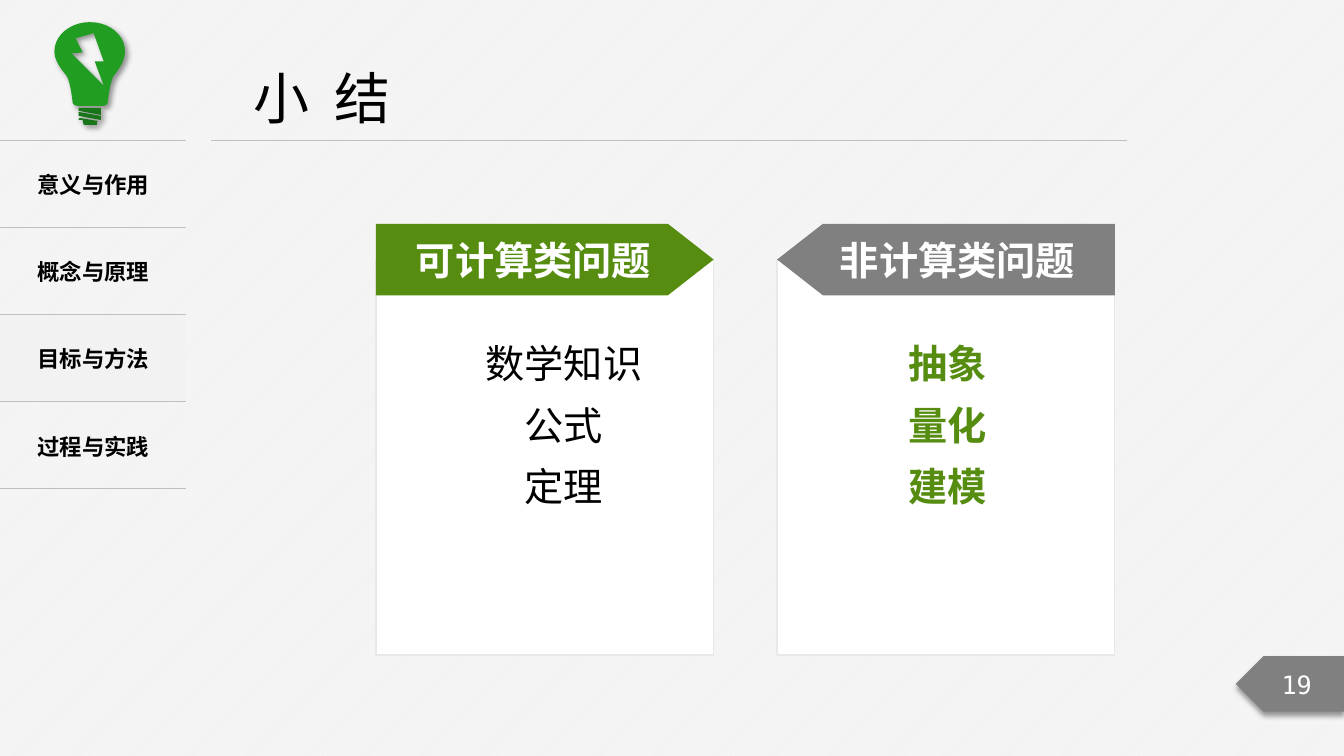
"""Build the summary slide on computable and non-computable problems."""
from dataclasses import dataclass

from lxml import etree
from pptx import Presentation
from pptx import util as u
from pptx.dml.color import RGBColor
from pptx.enum import dml, shapes, text
from pptx.oxml import ns
from pptx.shapes import autoshape
from pptx.text import text as words

WIDTH, HEIGHT = u.Inches(40 / 3), u.Inches(7.5)
COLUMN, ROW = WIDTH / 160, HEIGHT / 90
BULB_STEP = COLUMN * 0.12
CURVE_STEPS = 10

WHITE = RGBColor(0xFF, 0xFF, 0xFF)
BLACK = RGBColor(0x00, 0x00, 0x00)
PAPER = RGBColor(0xF2, 0xF2, 0xF2)
RULE = RGBColor(0xBF, 0xBF, 0xBF)
EDGE = RGBColor(0xE8, 0xE8, 0xE6)
GRAY = RGBColor(0x80, 0x80, 0x80)
GREEN = RGBColor(0x56, 0x8D, 0x11)
BULB_GREEN = RGBColor(0x21, 0x9E, 0x21)
BASE_GREEN = RGBColor(0x19, 0x75, 0x19)
CJK, MONO = "Noto Sans CJK SC", "DejaVu Sans Mono"
CENTER, LEFT = text.PP_ALIGN.CENTER, text.PP_ALIGN.LEFT
MIDDLE, TOP = text.MSO_ANCHOR.MIDDLE, text.MSO_ANCHOR.TOP
PENTAGON = shapes.MSO_SHAPE.PENTAGON
TIGHT = (0.08, 0.04)

Contour = list[tuple[int, ...]]


@dataclass(frozen=True)
class Box:
    """A place on the grid, in columns and rows."""
    left: float
    top: float
    width: float
    height: float

    def emu(self) -> tuple[int, int, int, int]:
        """Return the place in slide units."""
        return (round(self.left * COLUMN), round(self.top * ROW),
                round(self.width * COLUMN), round(self.height * ROW))


@dataclass(frozen=True)
class Panel:
    """A card with an arrow heading and a list of topics."""
    heading: str
    topics: tuple[str, ...]
    banner: RGBColor
    topic_color: RGBColor
    bold: bool
    align: text.PP_ALIGN
    topics_left: float
    topics_width: float
    flipped: bool


@dataclass(frozen=True)
class BulbPart:
    """A filled piece of the bulb; pairs are corners, sextets are curves."""
    color: RGBColor
    contours: tuple[Contour, ...]


CHAPTERS = ("意义与作用", "概念与原理", "目标与方法", "过程与实践")
CURRENT_CHAPTER = "目标与方法"
PANELS = (
    Panel("可计算类问题", ("数学知识", "公式", "定理"), GREEN, BLACK, False,
          CENTER, 55.68, 22.92, False),
    Panel("非计算类问题", ("抽象", "量化", "建模"), GRAY, GREEN, True,
          LEFT, 107.16, 18.36, True),
)
BULB = (
    BulbPart(BULB_GREEN, (
        [(89, 22), (70, 22, 54, 35, 54, 51), (54, 61, 62, 70, 66, 75),
         (70, 81, 72, 101, 72, 101), (72, 103, 74, 105, 77, 105), (102, 105),
         (105, 105, 107, 103, 107, 101), (107, 101, 109, 81, 113, 75),
         (117, 70, 124, 61, 124, 51), (124, 35, 109, 22, 89, 22)],
        [(71, 53), (82, 52), (75, 38), (93, 33), (103, 61), (94, 61), (103, 85)],
    )),
    BulbPart(BASE_GREEN, ([(78, 107), (100, 107), (100, 114), (78, 110)],)),
    BulbPart(BASE_GREEN, ([(100, 119), (100, 115), (78, 111), (78, 115)],)),
    BulbPart(BASE_GREEN, ([(79, 117), (97, 120), (96, 122), (96, 124),
                           (83, 124), (82, 119), (78, 119), (78, 118)],)),
)


def write(frame: words.TextFrame, lines: tuple[str, ...], *, size: float,
          color: RGBColor, font: str = CJK, bold: bool = False,
          align: text.PP_ALIGN = CENTER, anchor: text.MSO_ANCHOR = MIDDLE,
          spacing: float = 1.0, tracking: int = 0, wrap: bool = True,
          inset: tuple[float, float] = (0.1, 0.05)) -> None:
    """Fill a text frame with one paragraph for each line."""
    frame.word_wrap = wrap
    frame.vertical_anchor = anchor
    frame.margin_left = frame.margin_right = u.Inches(inset[0])
    frame.margin_top = frame.margin_bottom = u.Inches(inset[1])
    for index, line in enumerate(lines):
        paragraph = frame.add_paragraph() if index else frame.paragraphs[0]
        paragraph.alignment = align
        paragraph.line_spacing = spacing
        run = paragraph.add_run()
        run.text = line
        run.font.size, run.font.bold = u.Pt(size), bold
        run.font.color.rgb = color
        run.font.name = font
        properties = run.font._element if hasattr(run.font, "_element") else run._r.get_or_add_rPr()
        etree.SubElement(properties, ns.qn("a:ea"), typeface=font)
        if tracking:
            properties.set("spc", str(tracking))


def paint(shape: autoshape.Shape, fill: RGBColor, edge: RGBColor | None = None) -> None:
    """Give a shape a flat fill and an optional thin edge."""
    shape.fill.solid()
    shape.fill.fore_color.rgb = fill
    if edge is None:
        shape.line.fill.background()
    else:
        shape.line.color.rgb = edge
        shape.line.width = u.Pt(1)
    shape.shadow.inherit = False


def cast_shadow(shape: autoshape.Shape, angle: int) -> None:
    """Add a soft dark shadow in the given direction."""
    effects = shape.element.spPr.find(ns.qn("a:effectLst"))
    shadow = etree.SubElement(effects, ns.qn("a:outerShdw"), blurRad=str(u.Pt(4)),
                              dist=str(u.Pt(3)), dir=str(angle * 60000),
                              algn="ctr", rotWithShape="0")
    tone = etree.SubElement(shadow, ns.qn("a:srgbClr"), val=str(BLACK))
    etree.SubElement(tone, ns.qn("a:alpha"), val="40000")


def add_block(slide, kind: shapes.MSO_SHAPE, box: Box, fill: RGBColor,
              edge: RGBColor | None = None, flipped: bool = False) -> autoshape.Shape:
    """Add a painted preset shape, mirrored if asked."""
    block = slide.shapes.add_shape(kind, *box.emu())
    paint(block, fill, edge)
    if flipped:
        block.element.spPr.find(ns.qn("a:xfrm")).set("flipH", "1")
    return block


def trace(contour: Contour) -> list[tuple[int, int]]:
    """Turn corners and cubic curves into slide points."""
    points = [contour[0]]
    for step in contour[1:]:
        if len(step) == 2:
            points.append(step)
            continue
        (x0, y0), (x1, y1, x2, y2, x3, y3) = points[-1], step
        for index in range(1, CURVE_STEPS + 1):
            t = index / CURVE_STEPS
            a, b, c, d = (1 - t) ** 3, 3 * t * (1 - t) ** 2, 3 * t * t * (1 - t), t ** 3
            points.append((a * x0 + b * x1 + c * x2 + d * x3,
                           a * y0 + b * y1 + c * y2 + d * y3))
    return [(round(x * BULB_STEP), round(y * BULB_STEP)) for x, y in points]


def add_bulb(slide) -> None:
    """Draw the light bulb from its parts."""
    bulb = slide.shapes.add_group_shape()
    for part in BULB:
        first, *holes = [trace(contour) for contour in part.contours]
        outline = bulb.shapes.build_freeform(*first[0])
        outline.add_line_segments(first[1:], close=True)
        for hole in holes:
            outline.move_to(*hole[0])
            outline.add_line_segments(hole[1:], close=True)
        piece = outline.convert_to_shape()
        paint(piece, part.color)
        cast_shadow(piece, 45)


def add_chapters(slide) -> None:
    """Add the chapter list with ruled rows."""
    menu = slide.shapes.add_table(len(CHAPTERS), 1, *Box(0, 16.68, 22.2, 41.52).emu()).table
    menu.first_row = menu.horz_banding = False
    for index, chapter in enumerate(CHAPTERS):
        cell = menu.cell(index, 0)
        write(cell.text_frame, (chapter,), size=16, color=BLACK, bold=True)
        cell.vertical_anchor = MIDDLE
        if chapter == CURRENT_CHAPTER:
            cell.fill.solid()
            cell.fill.fore_color.rgb = PAPER
        else:
            cell.fill.background()
        properties = cell._tc.get_or_add_tcPr()
        for place, side in enumerate("LRTB"):
            border = etree.Element(ns.qn(f"a:ln{side}"), w=str(u.Pt(1)))
            ruled = side in "TB"
            ink = etree.SubElement(border, ns.qn("a:solidFill" if ruled else "a:noFill"))
            if ruled:
                etree.SubElement(ink, ns.qn("a:srgbClr"), val=str(RULE))
            properties.insert(place, border)


def add_panel(slide, panel: Panel, left: float) -> None:
    """Add a card, its arrow heading and its topics."""
    add_block(slide, shapes.MSO_SHAPE.RECTANGLE, Box(left, 30.96, 40.2, 47.04), WHITE, EDGE)
    banner = add_block(slide, PENTAGON, Box(left, 26.64, 40.2, 8.52), panel.banner,
                       flipped=panel.flipped)
    banner.adjustments[0] = 0.64
    write(banner.text_frame, (panel.heading,), size=28, color=WHITE, bold=True,
          wrap=False, inset=TIGHT)
    topics = slide.shapes.add_textbox(
        *Box(panel.topics_left, 38.28, panel.topics_width, 23.04).emu())
    write(topics.text_frame, panel.topics, size=28, color=panel.topic_color,
          bold=panel.bold, align=panel.align, anchor=TOP, spacing=1.3, inset=TIGHT)


def main() -> None:
    """Assemble and save the slide."""
    deck = Presentation()
    deck.slide_width, deck.slide_height = WIDTH, HEIGHT
    slide = deck.slides.add_slide(deck.slide_layouts[6])
    backdrop = slide.background.fill
    backdrop.patterned()
    backdrop.pattern = dml.MSO_PATTERN.LIGHT_UPWARD_DIAGONAL
    backdrop.fore_color.rgb, backdrop.back_color.rgb = WHITE, PAPER

    left, top, width, _ = Box(25.08, 16.68, 109.08, 0).emu()
    title_rule = slide.shapes.add_connector(
        shapes.MSO_CONNECTOR.STRAIGHT, left, top, left + width, top)
    title_rule.line.color.rgb, title_rule.line.width = RULE, u.Pt(0.5)
    etree.SubElement(title_rule.element.spPr, ns.qn("a:effectLst"))
    title = slide.shapes.add_textbox(*Box(29.04, 6.96, 19.92, 9.24).emu())
    write(title.text_frame, ("小 结",), size=40, color=BLACK, align=LEFT,
          anchor=TOP, tracking=450, wrap=False)

    page_tag = add_block(slide, PENTAGON, Box(147.12, 78.12, 12.88, 6.6), GRAY, flipped=True)
    cast_shadow(page_tag, 90)
    write(page_tag.text_frame, ("19",), size=18, color=WHITE, font=MONO)
    add_chapters(slide)
    add_bulb(slide)
    for index, panel in enumerate(PANELS):
        add_panel(slide, panel, 44.76 + index * 47.76)
    deck.save("out.pptx")


if __name__ == "__main__":
    main()
